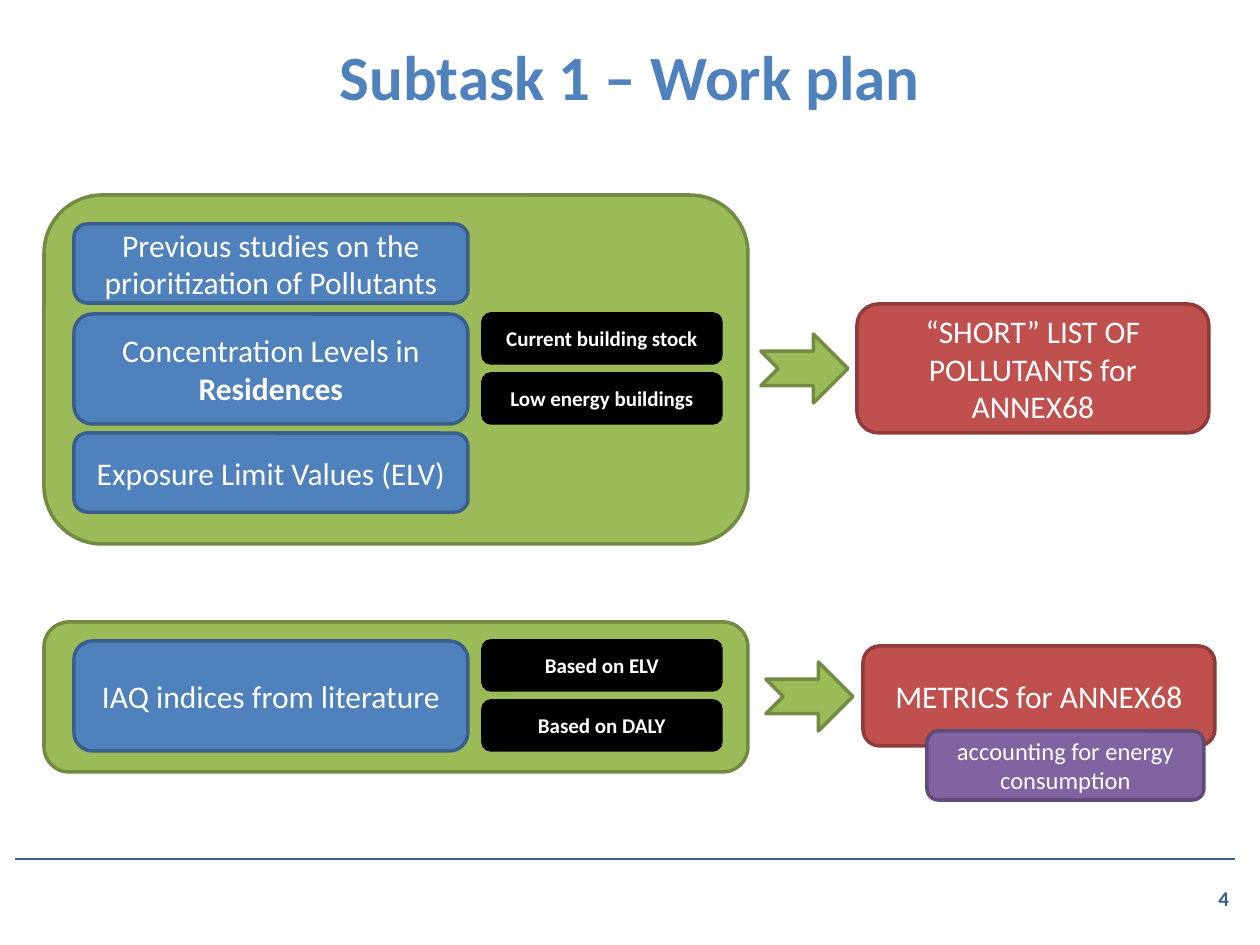
from pptx import Presentation
from pptx import util as u
from pptx.dml.color import RGBColor
from pptx.enum import shapes, text
from lxml import etree

PX = 914400 // 126  # one px in EMU
FONT = "Calibri"
COLOURS = {"white": "FFFFFF", "title": "4F81BD", "rule": "376092"}
# kind: fill, outline, text size, bold
STYLES = {
    "panel": ("9BBB59", "738A42", 18, False),
    "topic": ("4F81BD", "3A5F8C", 18, False),
    "detail": ("000000", "000000", 12, True),
    "result": ("C0504D", "8E3B39", 18, False),
    "note": ("8064A2", "5F4A78", 14, False),
}

# Content: each box has paragraphs, each a list of (words, bold) spans
TITLE = "Subtask 1 – Work plan"
PAGE_NUMBER = "4"
PANELS = [(195, 349), (622, 150)]  # top, height
TOPICS = [  # top, height, paragraphs
    (224, 79, [[("Previous studies on the", False)],
               [("prioritization of Pollutants", False)]]),
    (314, 110, [[("Concentration Levels in ", False), ("Residences", True)]]),
    (433, 79, [[("Exposure Limit Values (ELV)", False)]]),
    (641, 110, [[("IAQ indices from literature", False)]]),
]
DETAILS = [  # top of the pair, labels
    (314, ["Current building stock", "Low energy buildings"]),
    (641, ["Based on ELV", "Based on DALY"]),
]
RESULTS = [  # left, top, width, height, kind, label
    (857, 304, 352, 129, "result", "“SHORT” LIST OF POLLUTANTS for ANNEX68"),
    (863, 646, 352, 100, "result", "METRICS for ANNEX68"),
    (927, 731, 277, 69, "note", "accounting for energy consumption"),
]
ARROWS = [(761, 334), (766, 662)]  # left, top
DETAIL_HEIGHT, DETAIL_STEP = 49, 60

deck = Presentation()
deck.slide_width, deck.slide_height = u.Inches(10), u.Inches(7.5)
page = deck.slides.add_slide(deck.slide_layouts[6])


def emu(*lengths):
    return [length * PX for length in lengths]


def colour(value):
    return RGBColor.from_string(value)


def write(shape, paragraphs, size, hue, bold=False, align=text.PP_ALIGN.CENTER):
    frame = shape.text_frame
    frame.word_wrap = True
    frame.vertical_anchor = text.MSO_ANCHOR.MIDDLE
    for index, spans in enumerate(paragraphs):
        para = frame.add_paragraph() if index else frame.paragraphs[0]
        para.alignment = align
        for words, strong in spans:
            span = para.add_run()
            span.text = words
            span.font.name, span.font.size = FONT, u.Pt(size)
            span.font.bold = bold or strong
            span.font.color.rgb = colour(hue)


def add_box(place, kind, paragraphs=(), form=shapes.MSO_SHAPE.ROUNDED_RECTANGLE):
    fill, outline, size, bold = STYLES[kind]
    box = page.shapes.add_shape(form, *emu(*place))
    box.shadow.inherit = False
    box.fill.solid()
    box.fill.fore_color.rgb = colour(fill)
    box.line.color.rgb = colour(outline)
    box.line.width = u.Pt(2)
    write(box, paragraphs, size, COLOURS["white"], bold)


# Title, page number and footer rule
title = page.shapes.add_textbox(*emu(63, -4, 1134, 158))
write(title, [[(TITLE, True)]], 36, COLOURS["title"])
number = page.shapes.add_textbox(*emu(1206, 873, 54, 50))
write(number, [[(PAGE_NUMBER, True)]], 12, COLOURS["rule"],
      align=text.PP_ALIGN.LEFT)
rule = page.shapes.add_connector(shapes.MSO_CONNECTOR.STRAIGHT,
                                 *emu(15, 859, 1235, 859))
rule.line.color.rgb = colour(COLOURS["rule"])
rule.line.width = u.Pt(1)
etree.SubElement(
    rule.line._get_or_add_ln().getparent(),
    "{http://schemas.openxmlformats.org/drawingml/2006/main}effectLst")

# Work areas with their topics and details
for top, height in PANELS:
    add_box((44, top, 704, height), "panel")
for top, height, paragraphs in TOPICS:
    add_box((74, top, 394, height), "topic", paragraphs)
for top, labels in DETAILS:
    for row, label in enumerate(labels):
        add_box((483, top + row * DETAIL_STEP, 238, DETAIL_HEIGHT), "detail",
                [[(label, True)]])

# Arrows and results
for left, top in ARROWS:
    add_box((left, top, 87, 69), "panel",
            form=shapes.MSO_SHAPE.NOTCHED_RIGHT_ARROW)
for *place, kind, label in RESULTS:
    add_box(place, kind, [[(label, False)]])

deck.save("out.pptx")
